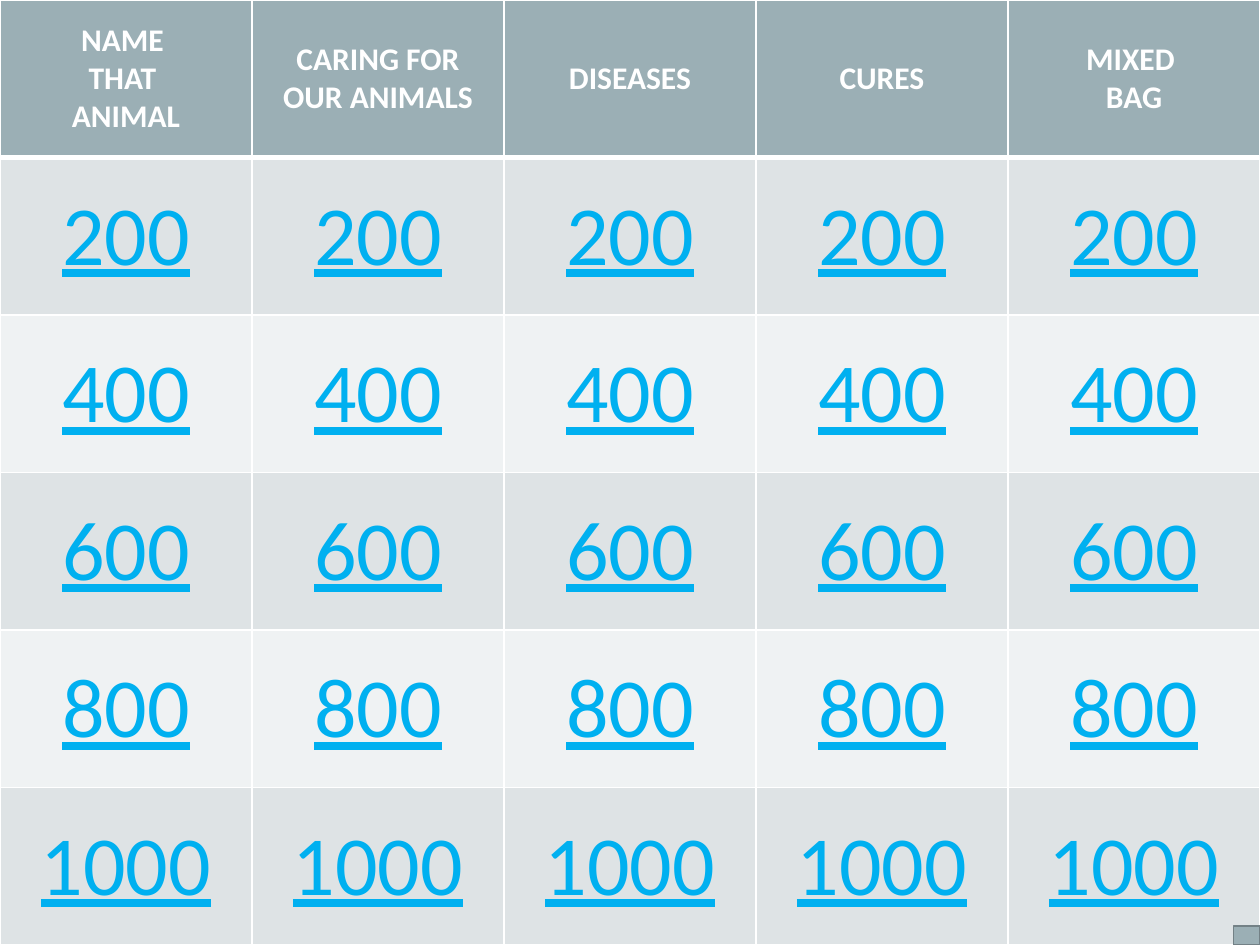
from lxml.etree import SubElement
from pptx import Presentation
from pptx.dml.color import RGBColor
from pptx.enum.shapes import MSO_SHAPE as Shape
from pptx.enum.text import MSO_ANCHOR as Anchor, PP_ALIGN as Align
from pptx.oxml.ns import qn
from pptx.util import Inches, Pt

COLORS = {
    "page": "F2F2F2",
    "header": "9BAFB5",
    "band_dark": "DEE3E5",
    "band_light": "EFF2F3",
    "white": "FFFFFF",
    "points": "00B0F0",
    "button_line": "738186",
}
FONT = "Calibri"
# One list of paragraphs per category; "\n" is a line break inside a paragraph.
CATEGORIES = [
    ["NAME ", "THAT ", "ANIMAL"],
    ["CARING FOR OUR ANIMALS"],
    ["DISEASES"],
    ["CURES"],
    ["MIXED \nBAG"],
]
POINTS = [200, 400, 600, 800, 1000]


def color(name):
    return RGBColor.from_string(COLORS[name])


def set_borders(cell, **widths):
    """Draw white cell borders; widths maps L, R, T and B to points."""
    props = cell._tc.get_or_add_tcPr()
    for side in "LRTB":
        line = SubElement(props, qn(f"a:ln{side}"), w=str(Pt(widths.get(side, 1))))
        fill = SubElement(line, qn("a:solidFill"))
        SubElement(fill, qn("a:srgbClr"), val=COLORS["white"])


def fill_cell(cell, paragraphs, fill, size, ink, bold=False, underline=False):
    cell.fill.solid()
    cell.fill.fore_color.rgb = color(fill)
    cell.vertical_anchor = Anchor.MIDDLE
    frame = cell.text_frame
    for index, text in enumerate(paragraphs):
        para = frame.add_paragraph() if index else frame.paragraphs[0]
        para.alignment = Align.CENTER
        for part, words in enumerate(text.split("\n")):
            if part:
                para.add_line_break()
            span = para.add_run()
            span.text = words
            span.font.name = FONT
            span.font.size = Pt(size)
            span.font.bold = bold
            span.font.underline = underline
            span.font.color.rgb = color(ink)


def add_board(page, left, top, width, height):
    """Add the quiz grid: a category row above rows of point values."""
    rows, columns = len(POINTS) + 1, len(CATEGORIES)
    board = page.shapes.add_table(rows, columns, left, top, width, height).table
    for column in board.columns:
        column.width = width // columns
    for row in board.rows:
        row.height = height // rows

    for column, paragraphs in enumerate(CATEGORIES):
        header = board.cell(0, column)
        set_borders(header, B=3)
        fill_cell(header, paragraphs, "header", 18, "white", bold=True)
        for row, value in enumerate(POINTS, start=1):
            cell = board.cell(row, column)
            set_borders(cell, T=3 if row == 1 else 1)
            band = "band_dark" if row % 2 else "band_light"
            fill_cell(cell, [str(value)], band, 48, "points", underline=True)


def add_corner_button(page, left, top, width, height):
    button = page.shapes.add_shape(Shape.RECTANGLE, left, top, width, height)
    button.shadow.inherit = False
    button.fill.solid()
    button.fill.fore_color.rgb = color("header")
    button.line.color.rgb = color("button_line")
    button.line.width = Pt(1)


def main():
    deck = Presentation()
    deck.slide_width, deck.slide_height = Inches(10), Inches(7.5)
    page = deck.slides.add_slide(deck.slide_layouts[6])
    page.background.fill.solid()
    page.background.fill.fore_color.rgb = color("page")

    add_board(page, Inches(0), Inches(0), deck.slide_width, deck.slide_height)
    width, height = Inches(0.21), Inches(0.15)
    add_corner_button(page, deck.slide_width - width, deck.slide_height - height,
                      width, height)
    deck.save("out.pptx")


if __name__ == "__main__":
    main()
